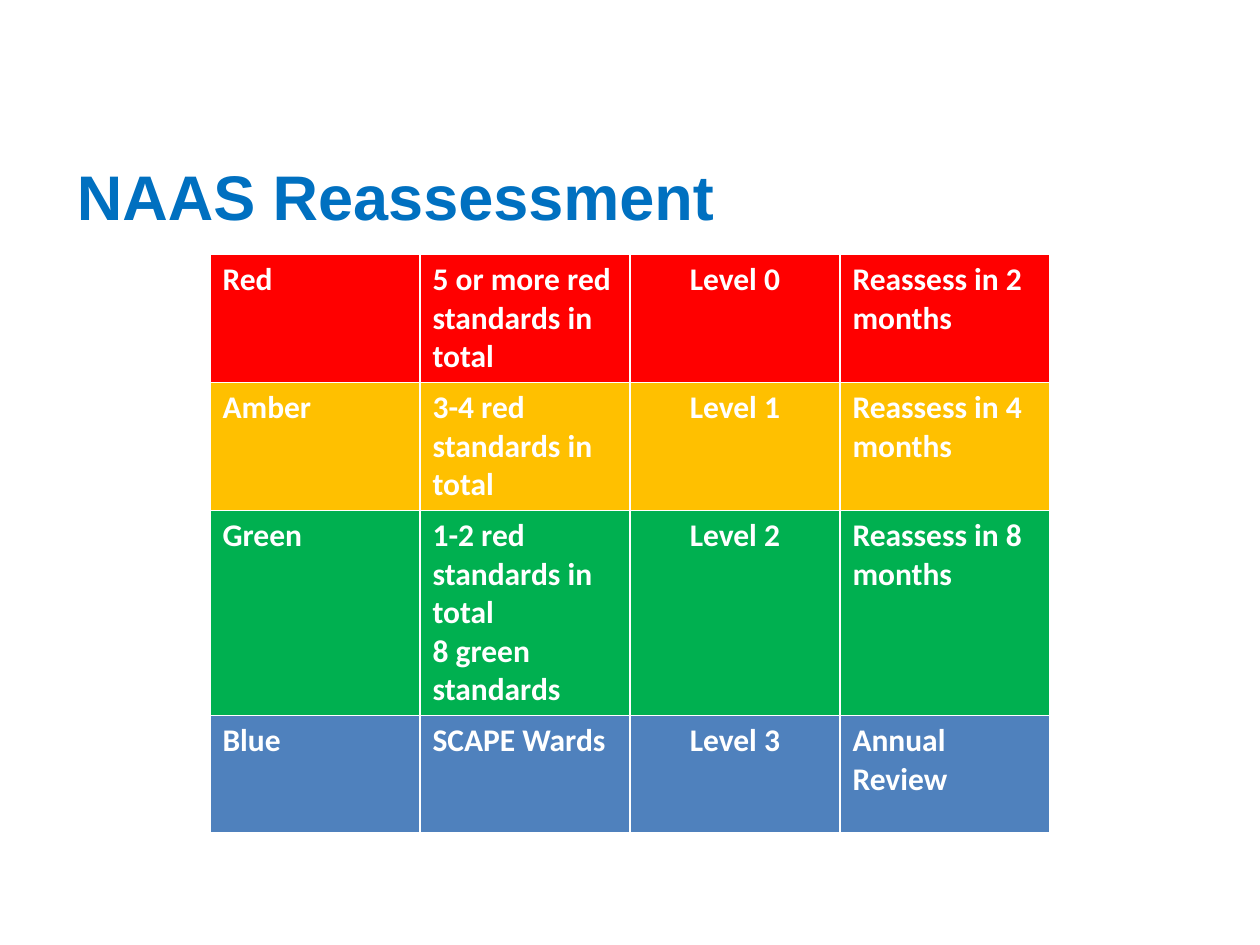
from dataclasses import dataclass

from lxml.etree import SubElement
from pptx import Presentation
from pptx.dml.color import RGBColor as Color
from pptx.enum.text import MSO_ANCHOR as Anchor, MSO_AUTO_SIZE as AutoSize, PP_ALIGN as Align
from pptx.oxml.ns import qn
from pptx.util import Inches, Pt


@dataclass(frozen=True)
class Theme:
    title_font: str = "Arial"
    table_font: str = "Calibri"
    title_size: int = 36
    table_size: int = 18
    border_width: int = 1
    title: str = "0070C0"
    white: str = "FFFFFF"
    red: str = "FF0000"
    amber: str = "FFC000"
    green: str = "00B050"
    blue: str = "4F81BD"


THEME = Theme()
WIDTH, HEIGHT = Inches(10), Inches(7.5)
COLUMNS = 4
LEVEL_COLUMN = 2

# Fill colour, then the text of each cell
RATINGS = [
    (THEME.red, ["Red", "5 or more red standards in total", "Level 0", "Reassess in 2 months"]),
    (THEME.amber, ["Amber", "3-4 red standards in total", "Level 1", "Reassess in 4 months"]),
    (THEME.green, ["Green", "1-2 red standards in total\n8 green standards", "Level 2",
                   "Reassess in 8 months"]),
    (THEME.blue, ["Blue", "SCAPE Wards", "Level 3", "Annual Review"]),
]


def style_paragraph(para, font, size, color, align):
    para.alignment = align
    for run in para.runs:
        run.font.name = font
        run.font.size = Pt(size)
        run.font.bold = True
        run.font.color.rgb = Color.from_string(color)


def add_title(page, text):
    box = page.shapes.title
    box.left, box.top = Inches(0.51), Inches(1.2)
    box.width, box.height = Inches(8.99), Inches(0.7)
    frame = box.text_frame
    frame.text = text
    frame.auto_size = AutoSize.NONE
    frame.vertical_anchor = Anchor.TOP
    style_paragraph(frame.paragraphs[0], THEME.title_font, THEME.title_size,
                    THEME.title, Align.LEFT)


def add_borders(cell):
    properties = cell._tc.get_or_add_tcPr()
    for side in ("lnL", "lnR", "lnT", "lnB"):
        line = SubElement(properties, qn(f"a:{side}"), w=str(Pt(THEME.border_width)))
        fill = SubElement(line, qn("a:solidFill"))
        SubElement(fill, qn("a:srgbClr"), val=THEME.white)


def format_cell(cell, text, color, align):
    add_borders(cell)
    cell.fill.solid()
    cell.fill.fore_color.rgb = Color.from_string(color)
    cell.text_frame.text = text
    for para in cell.text_frame.paragraphs:
        style_paragraph(para, THEME.table_font, THEME.table_size, THEME.white, align)


def add_rating_table(page, ratings):
    # The table spans the middle two thirds of the slide
    column_width, row_height = WIDTH // 6, Inches(0.93)
    table = page.shapes.add_table(
        len(ratings), COLUMNS, column_width, Inches(2.02),
        column_width * COLUMNS, row_height * len(ratings)).table
    table.first_row = table.horz_banding = False
    for row, (color, texts) in enumerate(ratings):
        for column, text in enumerate(texts):
            align = Align.CENTER if column == LEVEL_COLUMN else Align.LEFT
            format_cell(table.cell(row, column), text, color, align)


def main():
    deck = Presentation()
    deck.slide_width, deck.slide_height = WIDTH, HEIGHT
    page = deck.slides.add_slide(deck.slide_layouts[5])
    add_title(page, "NAAS Reassessment")
    add_rating_table(page, RATINGS)
    deck.save("out.pptx")


if __name__ == "__main__":
    main()
